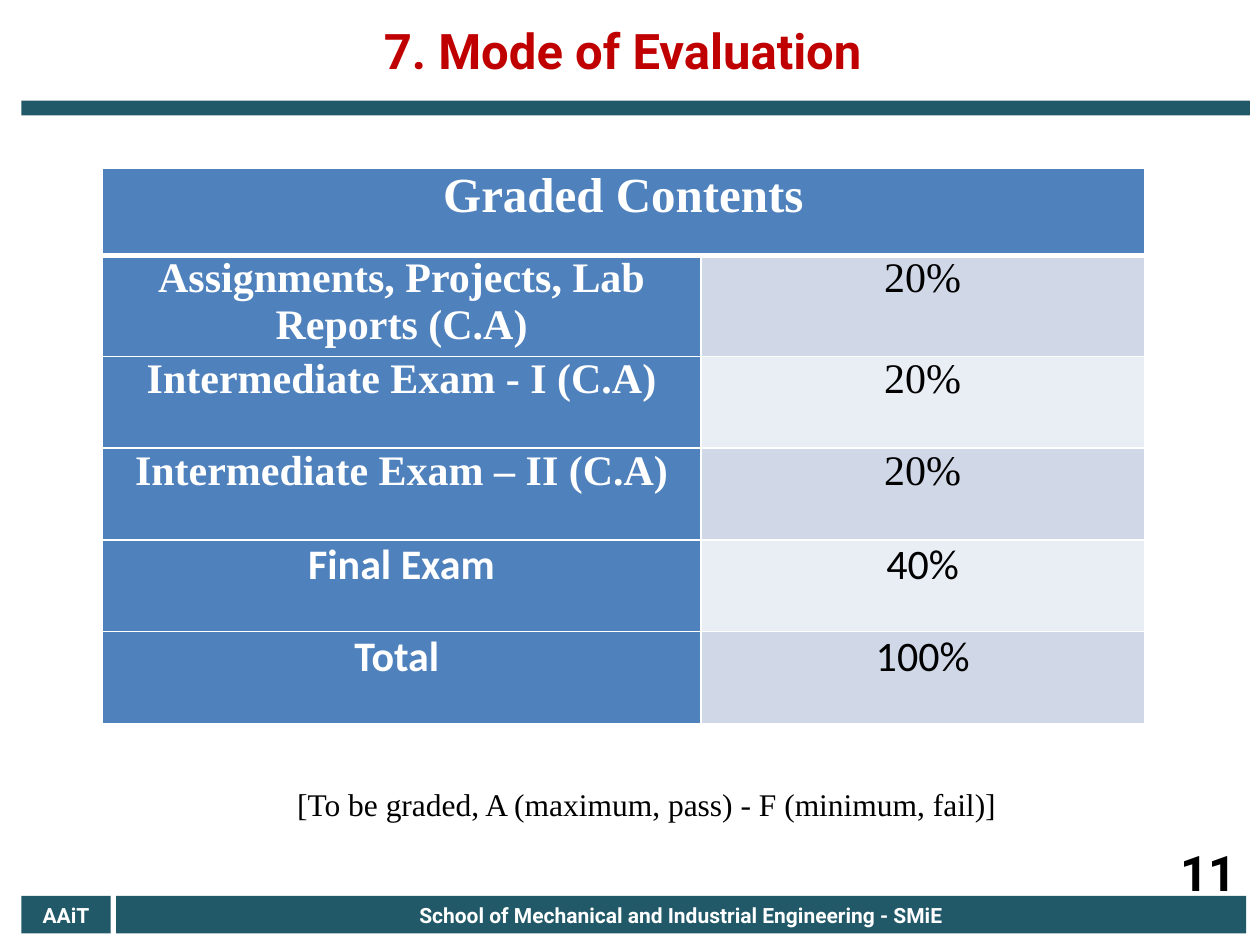
from lxml.etree import SubElement
from pptx import Presentation
from pptx.dml.color import RGBColor
from pptx.enum.shapes import MSO_SHAPE
from pptx.enum.text import MSO_ANCHOR, PP_ALIGN
from pptx.oxml.ns import qn
from pptx.util import Cm, Pt

TEAL, RED, BLUE, WHITE, BLACK = "215968", "C00000", "4F81BD", "FFFFFF", "000000"
BANDS = ["D0D8E8", "E9EDF4"]
SERIF, SANS, HEAD = "Times New Roman", "Calibri", "Roboto"
GRADES = [
    ("Assignments, Projects, Lab Reports (C.A)", "20%", SERIF),
    ("Intermediate Exam - I (C.A)", "20%", SERIF),
    ("Intermediate Exam – II (C.A)", "20%", SERIF),
    ("Final Exam", "40%", SANS),
    ("Total ", "100%", SANS),
]


def rgb(value):
    return RGBColor.from_string(value)


def write(tf, text, name, size, color, bold=True, align=PP_ALIGN.CENTER):
    p = tf.paragraphs[0]
    p.alignment = align
    r = p.add_run()
    r.text = text
    for key, value in {"name": name, "size": Pt(size), "bold": bold}.items():
        setattr(r.font, key, value)
    r.font.color.rgb = rgb(color)


def add_title(s, x, y, w, h, text):
    sp = s.shapes.title
    box = {"left": Cm(x), "top": Cm(y), "width": Cm(w), "height": Cm(h)}
    for key, value in box.items():
        setattr(sp, key, value)
    sp.text_frame.vertical_anchor = MSO_ANCHOR.TOP
    write(sp.text_frame, text, HEAD, 28, RED)


def add_bar(s, x, y, w, h, text=None):
    sp = s.shapes.add_shape(MSO_SHAPE.RECTANGLE, Cm(x), Cm(y), Cm(w), Cm(h))
    sp.shadow.inherit = False
    sp.fill.solid()
    sp.fill.fore_color.rgb = rgb(TEAL)
    sp.line.fill.background()
    if text:
        sp.text_frame.vertical_anchor = MSO_ANCHOR.TOP
        write(sp.text_frame, text, HEAD, 12, WHITE)


def add_footer(s, x, y, w, h, short, full):
    tab, gap = 1.8, 0.11
    add_bar(s, x, y, tab, h, short)
    add_bar(s, x + tab + gap, y, w - tab - gap, h, full)


def add_text(s, x, y, w, h, text, anchor=MSO_ANCHOR.TOP, **style):
    tf = s.shapes.add_textbox(Cm(x), Cm(y), Cm(w), Cm(h)).text_frame
    tf.word_wrap = True
    tf.vertical_anchor = anchor
    write(tf, text, color=BLACK, **style)


def style_cell(cell, fill, top=1, bottom=1):
    margins = {"margin_left": 0.18, "margin_right": 0.18,
               "margin_top": 0, "margin_bottom": 0}
    for key, value in margins.items():
        setattr(cell, key, Cm(value))
    tcPr = cell._tc.get_or_add_tcPr()
    for side, width in {"L": 1, "R": 1, "T": top, "B": bottom}.items():
        ln = SubElement(tcPr, qn(f"a:ln{side}"), w=str(Pt(width)))
        SubElement(SubElement(ln, qn("a:solidFill")), qn("a:srgbClr"), val=WHITE)
    cell.fill.solid()
    cell.fill.fore_color.rgb = rgb(fill)


def add_grades(s, x, y, widths, heights, heading, grades):
    frame = s.shapes.add_table(len(heights), len(widths), Cm(x), Cm(y),
                               Cm(sum(widths)), Cm(sum(heights)))
    table = frame.table
    for column, width in zip(table.columns, widths):
        column.width = Cm(width)
    for row, height in zip(table.rows, heights):
        row.height = Cm(height)
    table.cell(0, 0).merge(table.cell(0, 1))
    for cell in table.rows[0].cells:
        style_cell(cell, BLUE, bottom=3)
    write(table.cell(0, 0).text_frame, heading, SERIF, 28, WHITE)
    for i, (label, share, font) in enumerate(grades, 1):
        left, right = table.rows[i].cells
        for cell, fill in ((left, BLUE), (right, BANDS[(i - 1) % 2])):
            style_cell(cell, fill, top=3 if i == 1 else 1)
        write(left.text_frame, label, font, 24, WHITE)
        write(right.text_frame, share, font, 24, BLACK, bold=False)


def main():
    prs = Presentation()
    prs.slide_width, prs.slide_height = Cm(25.4), Cm(19.05)
    s = prs.slides.add_slide(prs.slide_layouts[5])
    add_title(s, 0, 0.28, 25.1, 1.45, "7. Mode of Evaluation")
    add_bar(s, 0.43, 2.03, 24.77, 0.3)
    add_footer(s, 0.43, 18.06, 24.69, 0.76, "AAiT",
               "School of Mechanical and Industrial Engineering - SMiE")
    add_text(s, 23.16, 16.94, 2.01, 1.27, "11", MSO_ANCHOR.MIDDLE,
             name=HEAD, size=28, align=PP_ALIGN.RIGHT)
    add_grades(s, 2.06, 3.4, [12.07, 8.94], [1.75, 1.91] + [1.85] * 4,
               "Graded Contents", GRADES)
    add_text(s, 5.74, 15.7, 15.01, 1.03,
             "[To be graded, A (maximum, pass) - F (minimum, fail)]",
             name=SERIF, size=18, bold=False, align=PP_ALIGN.LEFT)
    prs.save("out.pptx")


if __name__ == "__main__":
    main()
